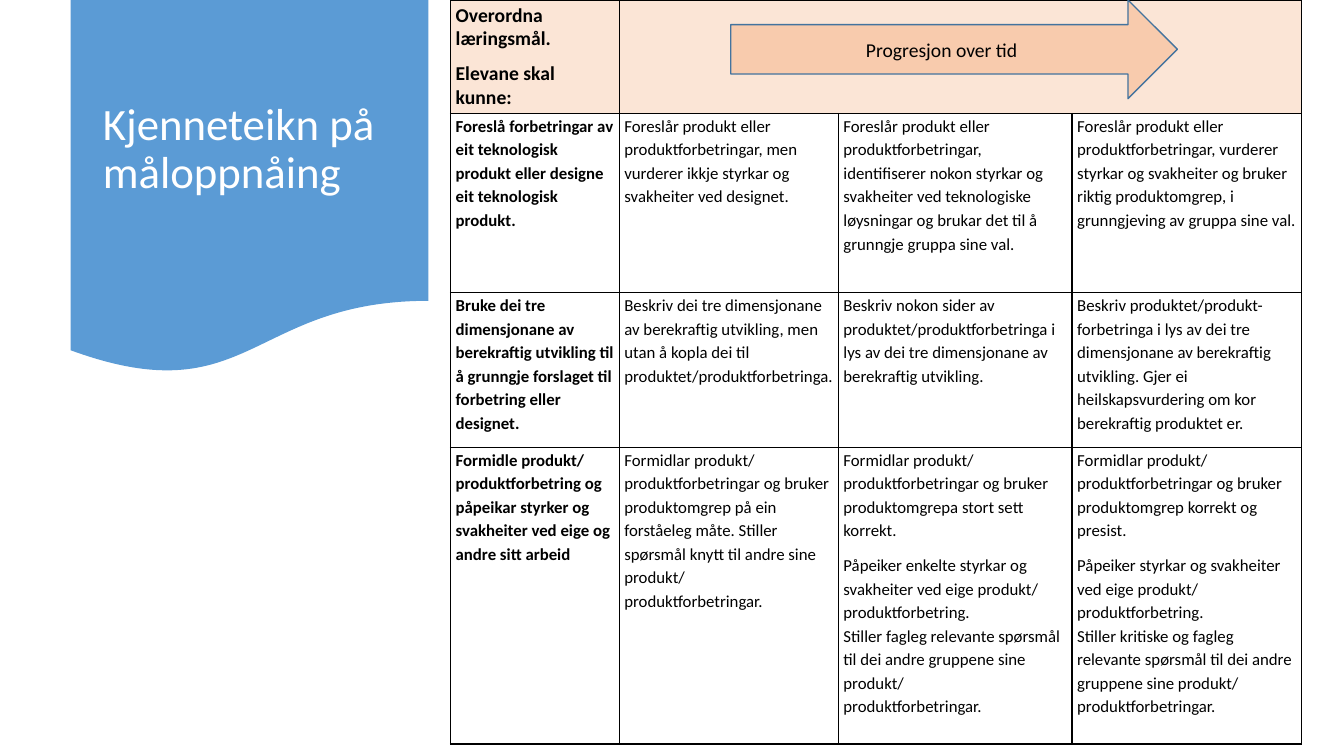
"""Build the slide on signs of goal attainment in a technology project."""
from dataclasses import dataclass

import pptx
import pptx.dml.color
import pptx.enum.shapes
import pptx.enum.text
import pptx.oxml
import pptx.oxml.ns
import pptx.util
from lxml import etree

Pt = pptx.util.Pt
RGBColor = pptx.dml.color.RGBColor
MSO_SHAPE = pptx.enum.shapes.MSO_SHAPE
PP_ALIGN = pptx.enum.text.PP_ALIGN
MSO_ANCHOR = pptx.enum.text.MSO_ANCHOR
qn = pptx.oxml.ns.qn

BLUE = RGBColor(0x5B, 0x9B, 0xD5)
DARK_BLUE = RGBColor(0x43, 0x73, 0x9E)
PEACH = RGBColor(0xFB, 0xE5, 0xD6)
ORANGE = RGBColor(0xF8, 0xCB, 0xAD)
BLACK = RGBColor(0, 0, 0)
WHITE = RGBColor(0xFF, 0xFF, 0xFF)
FONT = "Calibri"
COLUMN_WIDTHS = (120.5, 156.5, 167, 164)
ROW_HEIGHTS = (81, 128, 110.5, 212)


@dataclass(frozen=True)
class Box:
    left: float
    top: float
    width: float
    height: float

    def lengths(self) -> tuple:
        return Pt(self.left), Pt(self.top), Pt(self.width), Pt(self.height)


@dataclass(frozen=True)
class Goal:
    name: str
    levels: tuple[tuple[str, ...], ...]


HEADING = ("Overordna læringsmål.", "Elevane skal kunne:")
GOALS = (
    Goal(
        "Foreslå forbetringar av eit teknologisk produkt eller designe eit teknologisk produkt.",
        (
            ("Foreslår produkt eller produktforbetringar, men vurderer ikkje styrkar og "
             "svakheiter ved designet.",),
            ("Foreslår produkt eller produktforbetringar, identifiserer nokon styrkar og "
             "svakheiter ved teknologiske løysningar og brukar det til å grunngje gruppa "
             "sine val.",),
            ("Foreslår produkt eller produktforbetringar, vurderer styrkar og svakheiter og "
             "bruker riktig produktomgrep, i grunngjeving av gruppa sine val.",),
        ),
    ),
    Goal(
        "Bruke dei tre dimensjonane av berekraftig utvikling til å grunngje forslaget til "
        "forbetring eller designet.",
        (
            ("Beskriv dei tre dimensjonane av berekraftig utvikling, men utan å kopla dei til "
             "produktet/produktforbetringa.",),
            ("Beskriv nokon sider av produktet/produktforbetringa i lys av dei tre "
             "dimensjonane av berekraftig utvikling.",),
            ("Beskriv produktet/produkt-forbetringa i lys av dei tre dimensjonane av "
             "berekraftig utvikling. Gjer ei heilskapsvurdering om kor berekraftig "
             "produktet er.",),
        ),
    ),
    Goal(
        "Formidle produkt/\nproduktforbetring og påpeikar styrker og svakheiter ved eige og "
        "andre sitt arbeid",
        (
            ("Formidlar produkt/\nproduktforbetringar og bruker produktomgrep på ein "
             "forståeleg måte. Stiller spørsmål knytt til andre sine produkt/\n"
             "produktforbetringar.",),
            ("Formidlar produkt/\nproduktforbetringar og bruker produktomgrepa stort sett "
             "korrekt.",
             "Påpeiker enkelte styrkar og svakheiter ved eige produkt/\nproduktforbetring.\n"
             "Stiller fagleg relevante spørsmål til dei andre gruppene sine produkt/\n"
             "produktforbetringar."),
            ("Formidlar produkt/\nproduktforbetringar og bruker produktomgrep korrekt og "
             "presist.",
             "Påpeiker styrkar og svakheiter ved eige produkt/\nproduktforbetring.\n"
             "Stiller kritiske og fagleg relevante spørsmål til dei andre gruppene sine "
             "produkt/\nproduktforbetringar."),
        ),
    ),
)


def write(tf, paragraphs: tuple[str, ...], size: float, color: RGBColor = BLACK,
          bold: bool = False, spacing: float = 1.0, after: float = 8,
          align=PP_ALIGN.LEFT) -> None:
    for i, text in enumerate(paragraphs):
        p = tf.add_paragraph() if i else tf.paragraphs[0]
        p.text = text
        p.alignment = align
        p.line_spacing = spacing
        p.space_before = Pt(0)
        p.space_after = Pt(after)
        p.font.name = FONT
        p.font.size = Pt(size)
        p.font.bold = bold
        p.font.color.rgb = color


def add_filled_shape(slide, kind, box: Box, fill: RGBColor):
    sp = slide.shapes.add_shape(kind, *box.lengths())
    sp.shadow.inherit = False
    sp.fill.solid()
    sp.fill.fore_color.rgb = fill
    sp.line.fill.background()
    return sp


def format_cell(cell, fill: RGBColor) -> None:
    tcPr = cell._tc.get_or_add_tcPr()
    for side in ("a:lnL", "a:lnR", "a:lnT", "a:lnB"):
        ln = etree.SubElement(tcPr, qn(side), w=str(Pt(1)))
        solid = etree.SubElement(ln, qn("a:solidFill"))
        etree.SubElement(solid, qn("a:srgbClr"), val=str(BLACK))
    cell.fill.solid()
    cell.fill.fore_color.rgb = fill
    cell.margin_left = cell.margin_right = Pt(3.75)
    cell.margin_top = cell.margin_bottom = 0


def add_goal_table(slide) -> None:
    box = Box(321.75, 0, sum(COLUMN_WIDTHS), sum(ROW_HEIGHTS))
    table = slide.shapes.add_table(
        len(ROW_HEIGHTS), len(COLUMN_WIDTHS), *box.lengths()).table
    table.first_row = table.horz_banding = False
    for column, width in zip(table.columns, COLUMN_WIDTHS):
        column.width = Pt(width)
    for i, (row, height) in enumerate(zip(table.rows, ROW_HEIGHTS)):
        row.height = Pt(height)
        for cell in row.cells:
            format_cell(cell, WHITE if i else PEACH)
    table.cell(0, 1).merge(table.cell(0, 3))
    heading = table.cell(0, 0)
    heading.vertical_anchor = MSO_ANCHOR.MIDDLE
    write(heading.text_frame, HEADING, 14, bold=True)
    for i, goal in enumerate(GOALS, start=1):
        for j, paragraphs in enumerate(((goal.name,), *goal.levels)):
            write(table.cell(i, j).text_frame, paragraphs, 12, bold=j == 0, spacing=1.15)


def place_title(slide) -> None:
    title = slide.shapes.title
    title.left, title.top, title.width, title.height = Box(66.25, 13.75, 224, 186.5).lengths()
    tf = title.text_frame
    tf.word_wrap = True
    tf.auto_size = pptx.enum.text.MSO_AUTO_SIZE.NONE
    tf.vertical_anchor = MSO_ANCHOR.MIDDLE
    write(tf, ("Kjenneteikn på måloppnåing",), 32, WHITE, spacing=0.9, after=0)


def add_progress_arrow(slide) -> None:
    sp = add_filled_shape(slide, MSO_SHAPE.RIGHT_ARROW, Box(522, 0, 319, 70.5), ORANGE)
    sp.line.color.rgb = DARK_BLUE
    sp.line.width = Pt(1)
    sp.text_frame.vertical_anchor = MSO_ANCHOR.MIDDLE
    write(sp.text_frame, ("Progresjon over tid",), 14, spacing=1.07, align=PP_ALIGN.CENTER)


def main() -> None:
    prs = pptx.Presentation()
    prs.slide_width, prs.slide_height = Pt(960), Pt(540)
    s = prs.slides.add_slide(prs.slide_layouts[5])
    banner = add_filled_shape(s, MSO_SHAPE.FLOWCHART_DOCUMENT, Box(50.5, 0, 255.5, 268), BLUE)
    s.shapes.title._element.addprevious(banner._element)
    place_title(s)
    add_goal_table(s)
    add_progress_arrow(s)
    prs.save("out.pptx")


if __name__ == "__main__":
    main()
